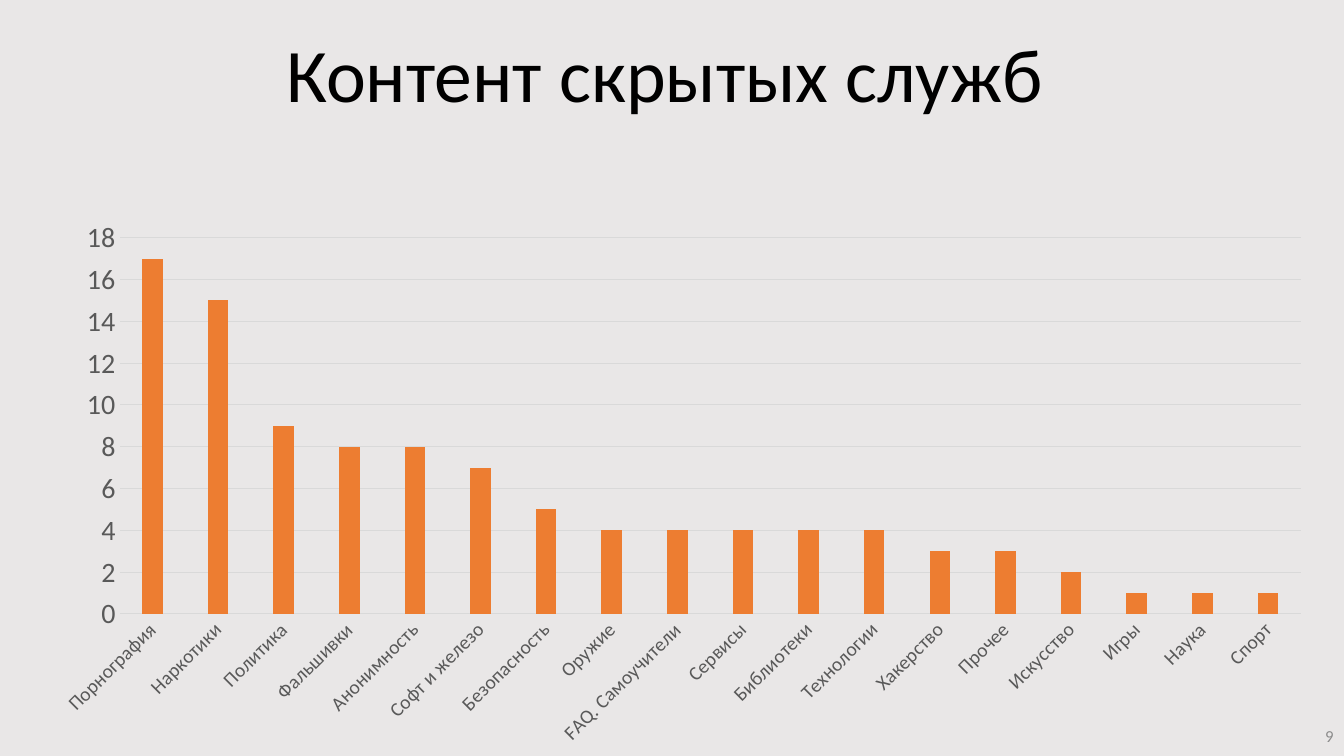
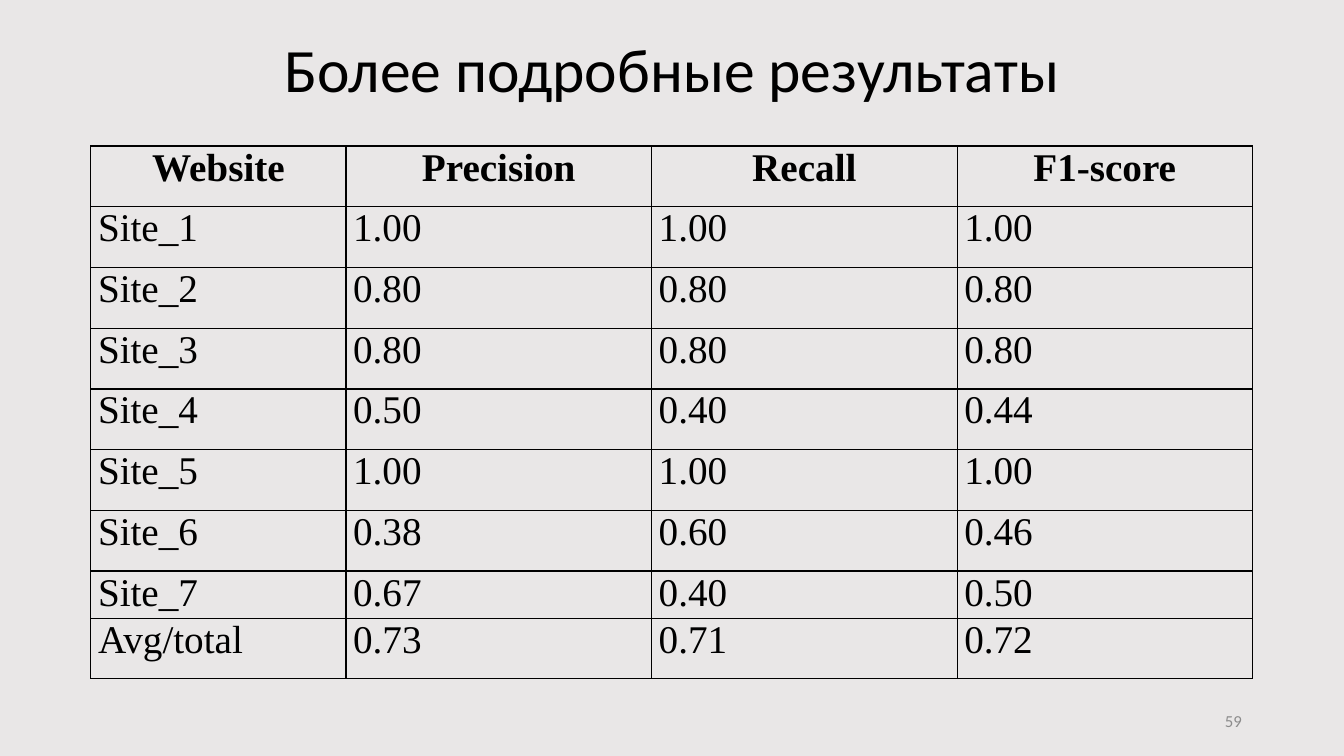
from lxml.etree import SubElement
from pptx import Presentation
from pptx.chart.data import CategoryChartData
from pptx.dml.color import RGBColor
from pptx.enum.chart import XL_CHART_TYPE, XL_TICK_MARK
from pptx.enum.text import MSO_ANCHOR, PP_ALIGN
from pptx.oxml.ns import qn
from pptx.util import Cm, Pt

COLORS = {
    "background": "E9E7E7",
    "text": "000000",
    "axis": "595959",
    "grid": "D9D9D9",
    "bar": "ED7D31",
    "number": "8C8C8C",
}
BODY_FONT = "Calibri"
TABLE_FONT = "Times New Roman"

TOPICS = {
    "Порнография": 17, "Наркотики": 15, "Политика": 9, "Фальшивки": 8,
    "Анонимность": 8, "Софт и железо": 7, "Безопасность": 5, "Оружие": 4,
    "FAQ. Самоучители": 4, "Сервисы": 4, "Библиотеки": 4, "Технологии": 4,
    "Хакерство": 3, "Прочее": 3, "Искусство": 2, "Игры": 1, "Наука": 1,
    "Спорт": 1,
}
RESULTS = [
    ("Website", "Precision", "Recall", "F1-score"),
    ("Site_1", "1.00", "1.00", "1.00"),
    ("Site_2", "0.80", "0.80", "0.80"),
    ("Site_3", "0.80", "0.80", "0.80"),
    ("Site_4", "0.50", "0.40", "0.44"),
    ("Site_5", "1.00", "1.00", "1.00"),
    ("Site_6", "0.38", "0.60", "0.46"),
    ("Site_7", "0.67", "0.40", "0.50"),
    ("Avg/total", "0.73", "0.71", "0.72"),
]


def rgb(name):
    return RGBColor.from_string(COLORS[name])


def set_font(font, size, color="text", name=BODY_FONT, bold=False):
    font.size, font.name, font.bold = Pt(size), name, bold
    font.color.rgb = rgb(color)


def set_line(line, color):
    line.color.rgb = rgb(color)
    line.width = Pt(0.75)


class Deck:
    def __init__(self):
        self.prs = Presentation()
        self.prs.slide_width, self.prs.slide_height = Cm(33.87), Cm(19.05)
        self.slide = None

    def new_slide(self):
        self.slide = self.prs.slides.add_slide(self.prs.slide_layouts[6])
        fill = self.slide.background.fill
        fill.solid()
        fill.fore_color.rgb = rgb("background")

    def text(self, text, box, size, color="text", align=PP_ALIGN.LEFT,
             anchor=MSO_ANCHOR.MIDDLE, spacing=None):
        tf = self.slide.shapes.add_textbox(*map(Cm, box)).text_frame
        tf.word_wrap = True
        tf.vertical_anchor = anchor
        p = tf.paragraphs[0]
        p.text, p.alignment, p.line_spacing = text, align, spacing
        set_font(p.font, size, color)

    def title(self, text, box, size, **style):
        self.text(text, box, size, **style)

    def number(self, number, left, top):
        self.text(str(number), (left, top, 7.62, 1.02), 12, "number",
                  PP_ALIGN.RIGHT)

    def column_chart(self, values, box):
        data = CategoryChartData()
        data.categories = list(values)
        data.add_series("Series 1", list(values.values()))
        chart = self.slide.shapes.add_chart(
            XL_CHART_TYPE.COLUMN_CLUSTERED, *map(Cm, box), data).chart
        chart.has_legend = chart.has_title = False
        set_font(chart.font, 10)

        # Bars
        plot = chart.plots[0]
        plot.vary_by_categories = False
        plot.gap_width, plot.overlap = 219, -27
        fill = plot.series[0].format.fill
        fill.solid()
        fill.fore_color.rgb = rgb("bar")

        # Axes
        for axis, size in ((chart.category_axis, 14), (chart.value_axis, 20)):
            axis.major_tick_mark = axis.minor_tick_mark = XL_TICK_MARK.NONE
            set_font(axis.tick_labels.font, size, "axis")
        set_line(chart.category_axis.format.line, "grid")
        axis = chart.value_axis
        axis.minimum_scale, axis.maximum_scale, axis.major_unit = 0, 18, 2
        axis.format.line.fill.background()
        set_line(axis.major_gridlines.format.line, "grid")

        # Slanted category labels
        for body in chart.element.xpath(".//c:catAx/c:txPr/a:bodyPr"):
            body.set("rot", "-2700000")
            body.set("vert", "horz")

    def table(self, rows, left, top, widths, heights):
        table = self.slide.shapes.add_table(
            len(rows), len(widths), Cm(left), Cm(top),
            Cm(sum(widths)), Cm(sum(heights))).table
        table.first_row = table.horz_banding = False
        for column, width in zip(table.columns, widths):
            column.width = Cm(width)
        for i, (row, height) in enumerate(zip(rows, heights)):
            table.rows[i].height = Cm(height)
            for j, text in enumerate(row):
                self.cell(table.cell(i, j), text, header=i == 0)

    def cell(self, cell, text, header):
        cell.margin_left = cell.margin_right = Cm(0.18)
        cell.margin_top = cell.margin_bottom = 0
        p = cell.text_frame.paragraphs[0]
        p.text = text
        p.alignment = PP_ALIGN.CENTER if header else PP_ALIGN.JUSTIFY
        set_font(p.font, 28, name=TABLE_FONT, bold=header)
        # Borders come before the fill in the cell properties
        props = cell._tc.get_or_add_tcPr()
        for side in ("lnL", "lnR", "lnT", "lnB"):
            ln = SubElement(props, qn(f"a:{side}"), w=str(Pt(1)))
            fill = SubElement(ln, qn("a:solidFill"))
            SubElement(fill, qn("a:srgbClr"), val=COLORS["text"])
        cell.fill.background()


def main():
    deck = Deck()

    # Content of hidden services
    deck.new_slide()
    deck.title("Контент скрытых служб", (6.96, 0.56, 26.9, 2.57), 54,
               anchor=MSO_ANCHOR.TOP)
    deck.column_chart(TOPICS, (0.94, 5.28, 32.49, 13.77))
    deck.number(9, 26.24, 18.03)

    # Detailed results
    deck.new_slide()
    deck.title("Более подробные результаты", (2.34, 0, 29.21, 3.68), 44,
               align=PP_ALIGN.CENTER, spacing=0.9)
    deck.number(59, 23.93, 17.65)
    deck.table(RESULTS, 2.29, 3.68, (6.43, 7.7, 7.7, 7.44),
               [1.53] * 7 + [0.97, 1.53])

    deck.prs.save("out.pptx")


if __name__ == "__main__":
    main()
